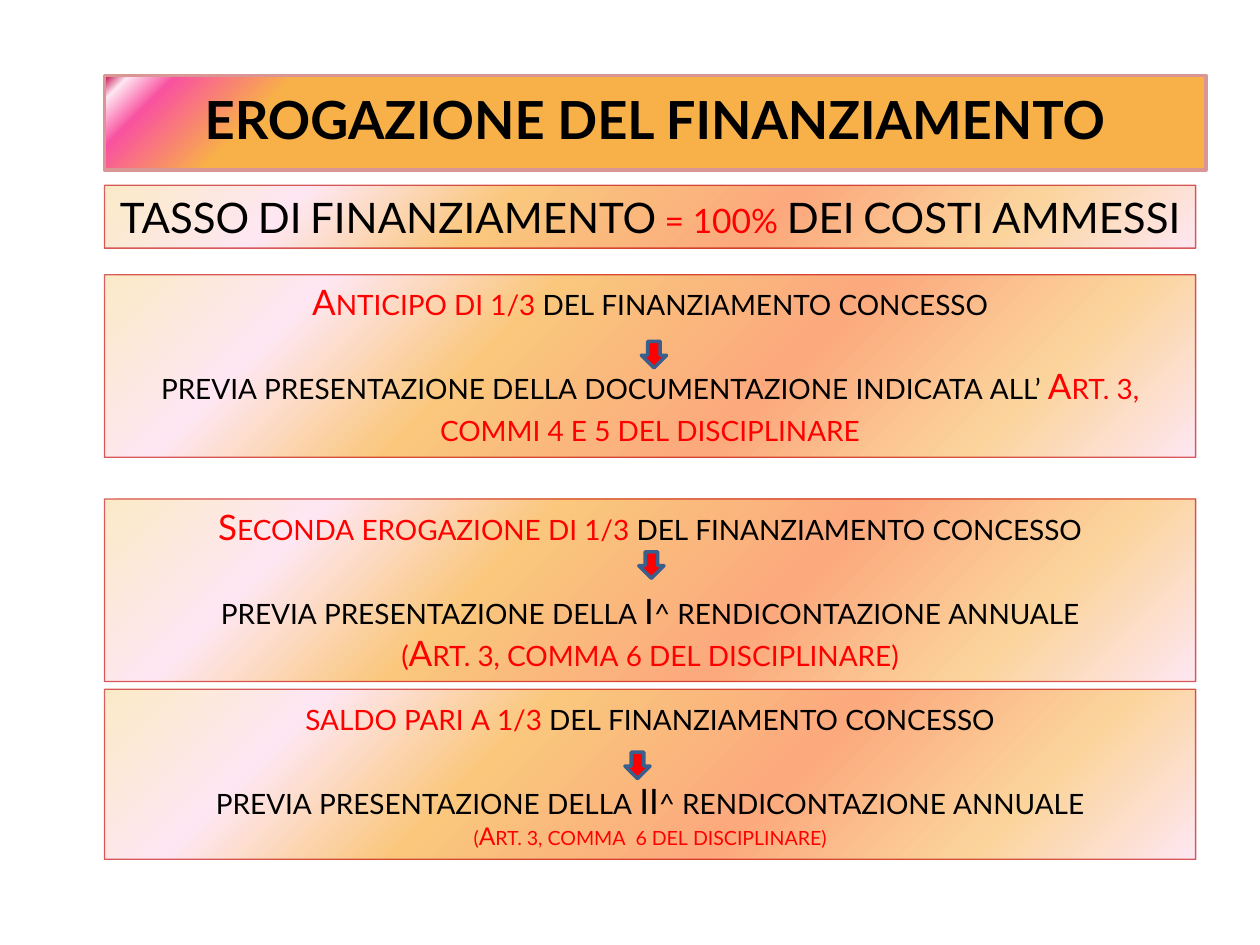
import pptx
import pptx.dml.color
import pptx.enum.shapes
import pptx.enum.text
import pptx.oxml
import pptx.oxml.ns
import pptx.util
from dataclasses import dataclass
from pptx.util import Inches


@dataclass(frozen=True)
class Theme:
    font: str = "Lato"
    ink: str = "000000"
    accent: str = "FF0000"
    title_line: str = "D99694"
    box_line: str = "C00000"
    arrow_line: str = "3A5F8C"
    title_size: int = 30
    rate_size: int = 24
    text_size: int = 20
    note_size: int = 14
    title_stops: tuple = ((0, "F8B049"), (84, "F8B049"), (94, "F952A0"), (98, "FEE7F2"), (100, "C50849"))
    box_stops: tuple = ((0, "FBEAC7"), (18, "FEE7F2"), (36, "FAC77D"),
                        (61, "FBA97D"), (82, "FBD49C"), (100, "FEE7F2"))


theme = Theme()
color = pptx.dml.color.RGBColor.from_string


def add_text(para, text, size=theme.text_size, ink=theme.ink, bold=False, small_caps=True):
    para.alignment = pptx.enum.text.PP_ALIGN.CENTER
    span = para.add_run()
    span.text = text
    span.font.name = theme.font
    span.font.size = pptx.util.Pt(size)
    span.font.bold = bold
    span.font.color.rgb = color(ink)
    if small_caps:
        span.font._element.set("cap", "small")


def paint(shape, stops, angle, line, width):
    shape.line.color.rgb = color(line)
    shape.line.width = pptx.util.Pt(width)
    marks = "".join(f'<a:gs pos="{place * 1000}"><a:srgbClr val="{tint}"/></a:gs>' for place, tint in stops)
    gradient = pptx.oxml.parse_xml(
        f'<a:gradFill {pptx.oxml.ns.nsdecls("a")} rotWithShape="1"><a:gsLst>{marks}</a:gsLst>'
        f'<a:lin ang="{angle * 60000}" scaled="0"/></a:gradFill>')
    shape.fill.solid()
    solid = shape._element.spPr.find(pptx.oxml.ns.qn("a:solidFill"))
    solid.getparent().replace(solid, gradient)


deck = pptx.Presentation()
deck.slide_width, deck.slide_height = Inches(10), Inches(7.5)
page = deck.slides.add_slide(deck.slide_layouts[5])

title = page.shapes.title
title.left, title.top, title.width, title.height = Inches(0.83), Inches(0.6), Inches(8.74), Inches(0.75)
paint(title, theme.title_stops, 225, theme.title_line, 2)
title.text_frame.auto_size = pptx.enum.text.MSO_AUTO_SIZE.NONE
title.text_frame.vertical_anchor = pptx.enum.text.MSO_ANCHOR.MIDDLE
heading = title.text_frame.paragraphs[0]
heading.line_spacing = 0.9
add_text(heading, "EROGAZIONE DEL FINANZIAMENTO", size=theme.title_size, bold=True, small_caps=False)

red = {"ink": theme.accent}
rate = {"size": theme.rate_size}
granted = ("del finanziamento concesso", {})
boxes = [
    (1.47, 0.5, [
        [("TASSO DI FINANZIAMENTO ", rate), ("= 100% ", rate | red), ("DEI COSTI AMMESSI", rate)],
    ]),
    (2.18, 1.45, [
        [("Anticipo di 1/3 ", red), granted],
        [("previa presentazione della documentazione indicata all’ ", {}),
         ("Art. 3, commi 4 e 5 del disciplinare", red)],
    ]),
    (3.96, 1.45, [
        [("Seconda erogazione di 1/3 ", red), granted],
        [("previa presentazione della I^ rendicontazione annuale", {})],
        [("(Art. 3, comma 6 del disciplinare)", red)],
    ]),
    (5.47, 1.35, [
        [("saldo pari a 1/3 ", red), granted],
        [("previa presentazione della II^ rendicontazione annuale", {})],
        [("(Art. 3, comma  6 del disciplinare)", red | {"size": theme.note_size})],
    ]),
]
for top, height, lines in boxes:
    box = page.shapes.add_shape(pptx.enum.shapes.MSO_SHAPE.RECTANGLE,
                                Inches(0.83), Inches(top), Inches(8.66), Inches(height))
    box.shadow.inherit = False
    paint(box, theme.box_stops, 45, theme.box_line, 0.75)
    line_color = box.line._ln.find(".//" + pptx.oxml.ns.qn("a:srgbClr"))
    line_color.append(pptx.oxml.parse_xml(f'<a:alpha {pptx.oxml.ns.nsdecls("a")} val="61000"/>'))
    frame = box.text_frame
    frame.word_wrap = True
    frame.auto_size = pptx.enum.text.MSO_AUTO_SIZE.SHAPE_TO_FIT_TEXT
    frame.vertical_anchor = pptx.enum.text.MSO_ANCHOR.TOP
    for index, spans in enumerate(lines):
        para = frame.add_paragraph() if index else frame.paragraphs[0]
        if index == 1:
            para.space_before = pptx.util.Pt(24)
        for text, style in spans:
            add_text(para, text, **style)

for left, top in [(5.09, 2.71), (5.07, 4.38), (4.96, 5.97)]:
    arrow = page.shapes.add_shape(pptx.enum.shapes.MSO_SHAPE.DOWN_ARROW,
                                  Inches(left), Inches(top), Inches(0.2), Inches(0.21))
    arrow.shadow.inherit = False
    arrow.fill.solid()
    arrow.fill.fore_color.rgb = color(theme.accent)
    arrow.line.color.rgb = color(theme.arrow_line)
    arrow.line.width = pptx.util.Pt(2)

deck.save("out.pptx")
